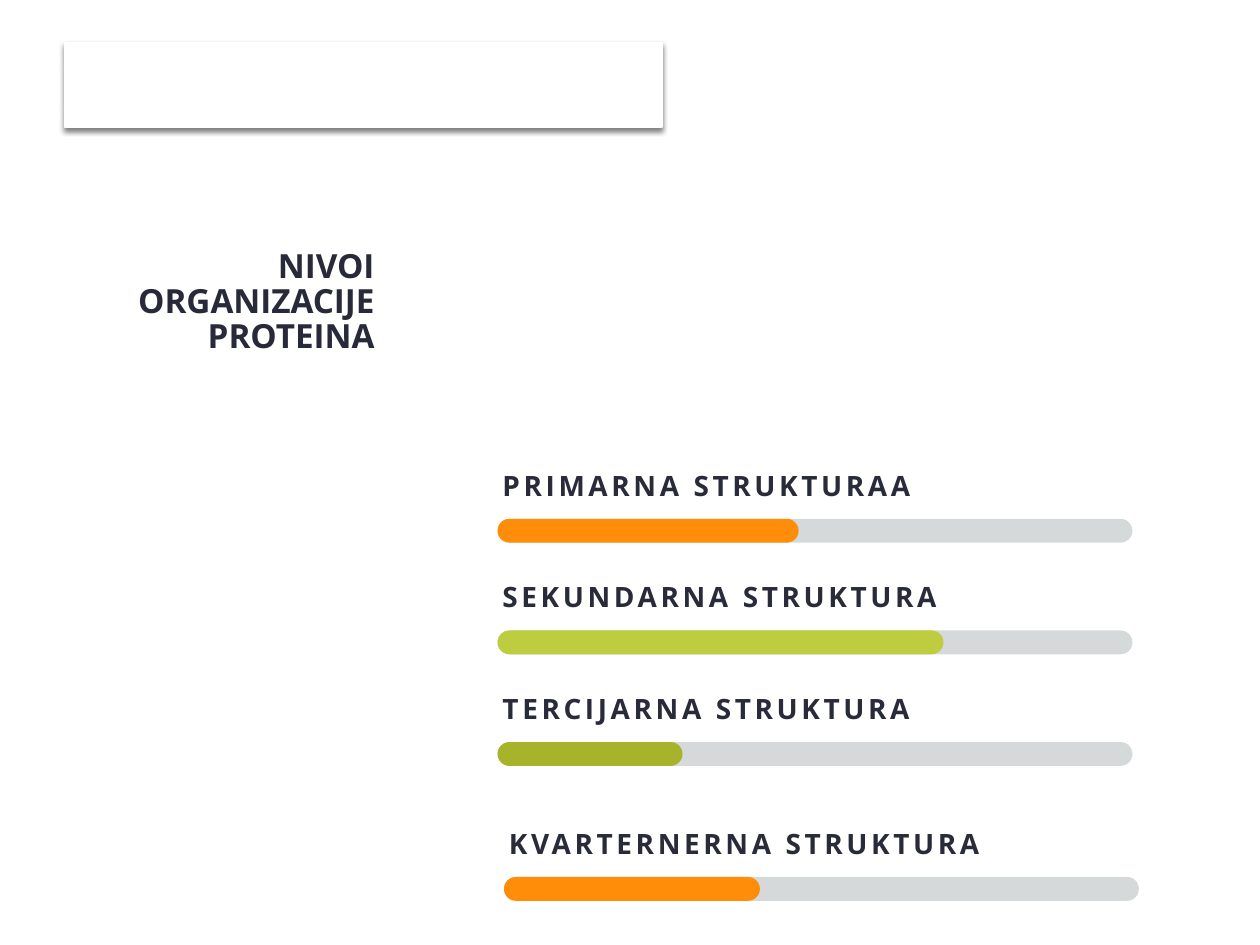
from lxml import etree
from pptx import Presentation
from pptx.dml.color import RGBColor
from pptx.enum.shapes import MSO_SHAPE
from pptx.enum.text import MSO_ANCHOR, MSO_AUTO_SIZE, PP_ALIGN
from pptx.oxml import parse_xml
from pptx.util import Cm, Pt

RECTANGLE, ROUNDED = MSO_SHAPE.RECTANGLE, MSO_SHAPE.ROUNDED_RECTANGLE
MIDDLE, NO_FIT, RIGHT = MSO_ANCHOR.MIDDLE, MSO_AUTO_SIZE.NONE, PP_ALIGN.RIGHT
WHITE = RGBColor(0xFF, 0xFF, 0xFF)
TITLE_INK = RGBColor(0x28, 0x2A, 0x3A)
LABEL_INK = RGBColor(0x29, 0x2B, 0x3A)
TRACK_GREY = RGBColor(0xD5, 0xD9, 0xD9)
ORANGE = RGBColor(0xFF, 0x8D, 0x09)
LIME = RGBColor(0xBE, 0xCD, 0x3F)
OLIVE = RGBColor(0xA7, 0xB3, 0x2A)

FONT = "Open Sans"
TRACK_WIDTH, BAR_HEIGHT = 12.8, 0.48
LABEL_RISE, LABEL_HEIGHT = 1.17, 0.97
NAMESPACE = "http://schemas.openxmlformats.org/drawingml/2006/main"


def write_text(shape, text, size, color, inset):
    """Fill the shape with one bold run and return its paragraph and run."""
    frame = shape.text_frame
    frame.word_wrap = True
    frame.auto_size = NO_FIT
    frame.vertical_anchor = MIDDLE
    frame.margin_left = frame.margin_right = Cm(inset)
    frame.margin_top = frame.margin_bottom = Cm(inset)
    para = frame.paragraphs[0]
    span = para.add_run()
    span.text = text
    span.font.name = FONT
    span.font.size = Pt(size)
    span.font.bold = True
    span.font.color.rgb = color
    return para, span


def add_bar(group, left, top, width, color):
    bar = group.shapes.add_shape(ROUNDED, Cm(left), Cm(top), Cm(width), Cm(BAR_HEIGHT))
    bar.adjustments[0] = 0.5
    bar.shadow.inherit = False
    bar.fill.solid()
    bar.fill.fore_color.rgb = color
    bar.line.fill.background()


deck = Presentation()
deck.slide_width, deck.slide_height = Cm(25.4), Cm(19.05)
page = deck.slides.add_slide(deck.slide_layouts[5])

# Title
title = page.shapes.title
title.left, title.top, title.width, title.height = Cm(1.3), Cm(4.83), Cm(6.3), Cm(2.57)
title_para, title_span = write_text(title, "NIVOI ORGANIZACIJE PROTEINA", 19, TITLE_INK, 0.05)
title_para.alignment = RIGHT
title_para.line_spacing = 0.88

# Labelled bars: text, label width, left, top, filled width, colour
levels = [
    ("PRIMARNA STRUKTURAA", 9.5, 10.03, 10.46, 6.07, ORANGE),
    ("SEKUNDARNA STRUKTURA", 9.5, 10.03, 12.71, 8.99, LIME),
    ("TERCIJARNA STRUKTURA", 10.54, 10.03, 14.96, 3.73, OLIVE),
    ("KVARTERNERNA STRUKTURA", 10.41, 10.16, 17.68, 5.16, ORANGE),
]
for text, label_width, left, top, filled_width, color in levels:
    group = page.shapes.add_group_shape()
    label = group.shapes.add_textbox(
        Cm(left - 0.05), Cm(top - LABEL_RISE), Cm(label_width), Cm(LABEL_HEIGHT))
    label_para, label_span = write_text(label, text, 16, LABEL_INK, 0.15)
    label_span.font._element.set("spc", "210")
    add_bar(group, left, top, TRACK_WIDTH, TRACK_GREY)
    add_bar(group, left, top, filled_width, color)

# Raised white panel
panel = page.shapes.add_shape(RECTANGLE, Cm(1.3), Cm(0.86), Cm(12.04), Cm(1.7))
panel.fill.solid()
panel.fill.fore_color.rgb = WHITE
panel.line.color.rgb = WHITE
panel.line.width = Pt(1)
panel.shadow.inherit = False
effects = panel._element.spPr.find(f"{{{NAMESPACE}}}effectLst")
shadow = etree.SubElement(
    effects, f"{{{NAMESPACE}}}outerShdw",
    blurRad=str(Pt(3)), dist=str(Pt(2)), dir="5400000", rotWithShape="0")
shadow.append(parse_xml(
    f'<a:srgbClr xmlns:a="{NAMESPACE}" val="000000"><a:alpha val="50000"/></a:srgbClr>'))

deck.save("out.pptx")
